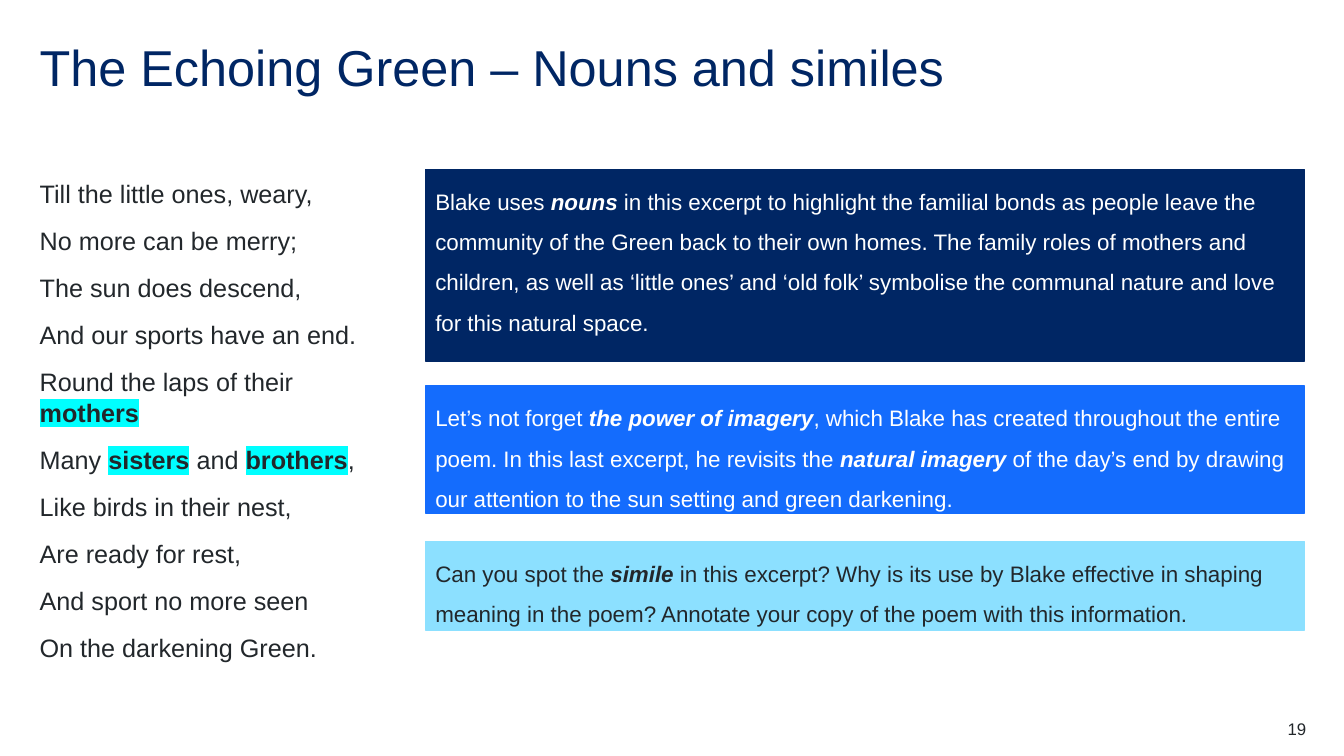
import pptx
import pptx.dml.color
import pptx.enum.shapes
import pptx.enum.text
import pptx.oxml
import pptx.oxml.ns
import pptx.util

Cm = pptx.util.Cm
Pt = pptx.util.Pt
PP_ALIGN = pptx.enum.text.PP_ALIGN
ANCHOR = pptx.enum.text.MSO_ANCHOR

NAVY, BLUE, SKY = "002664", "146CFD", "8CE0FF"
INK, WHITE, CYAN = "22272B", "FFFFFF", "00FFFF"
LEFT_MARGIN = 1
COMMENT_LEFT, COMMENT_WIDTH = 10.72, 22.15

POEM = [
    "Till the little ones, weary,",
    "No more can be merry;",
    "The sun does descend,",
    "And our sports have an end.",
    "Round the laps of their *mothers*",
    "Many *sisters* and *brothers*,",
    "Like birds in their nest,",
    "Are ready for rest,",
    "And sport no more seen",
    "On the darkening Green.",
]

COMMENTS = [
    (4.27, 4.83, NAVY, WHITE,
     "Blake uses *nouns* in this excerpt to highlight the familial bonds as people "
     "leave the community of the Green back to their own homes. The family roles of "
     "mothers and children, as well as ‘little ones’ and ‘old folk’ symbolise the "
     "communal nature and love for this natural space."),
    (9.73, 3.2, BLUE, WHITE,
     "Let’s not forget *the power of imagery*, which Blake has created throughout the "
     "entire poem. In this last excerpt, he revisits the *natural imagery *of the day’s "
     "end by drawing our attention to the sun setting and green darkening."),
    (13.64, 2.24, SKY, INK,
     "Can you spot the *simile* in this excerpt? Why is its use by Blake effective in "
     "shaping meaning in the poem? Annotate your copy of the poem with this information."),
]


def rgb(value):
    return pptx.dml.color.RGBColor.from_string(value)


def apply(target, values):
    for name, value in values.items():
        setattr(target, name, value)


def place(shape, left, top, width, height):
    apply(shape, {"left": Cm(left), "top": Cm(top),
                  "width": Cm(width), "height": Cm(height)})


def set_frame(frame, anchor, inset=True):
    apply(frame, {"word_wrap": True, "vertical_anchor": anchor,
                  "auto_size": pptx.enum.text.MSO_AUTO_SIZE.NONE})
    if not inset:
        apply(frame, {"margin_left": 0, "margin_top": 0,
                      "margin_right": 0, "margin_bottom": 0})


def highlight(run, color):
    mark = pptx.oxml.parse_xml(
        f'<a:highlight {pptx.oxml.ns.nsdecls("a")}><a:srgbClr val="{color}"/></a:highlight>')
    run.font.fill._xPr.find(pptx.oxml.ns.qn("a:solidFill")).addnext(mark)


def write(paragraph, marked_text, size, color, spacing, italic=False, marker=None):
    apply(paragraph, {"alignment": PP_ALIGN.LEFT, "space_before": Pt(0), **spacing})
    for index, words in enumerate(marked_text.split("*")):
        if not words:
            continue
        emphasised = index % 2 == 1
        run = paragraph.add_run()
        run.text = words
        apply(run.font, {"name": "Arial", "size": Pt(size), "bold": emphasised,
                         "italic": emphasised and italic})
        run.font.color.rgb = rgb(color)
        if emphasised and marker:
            highlight(run, marker)


def remove_bullet(paragraph):
    properties = paragraph._p.get_or_add_pPr()
    properties.set("marL", "0")
    properties.set("indent", "0")
    properties.append(pptx.oxml.parse_xml(f'<a:buNone {pptx.oxml.ns.nsdecls("a")}/>'))


def fill_title(title):
    place(title, LEFT_MARGIN, 1, 31.9, 1.52)
    set_frame(title.text_frame, ANCHOR.MIDDLE, inset=False)
    write(title.text_frame.paragraphs[0], "The Echoing Green – Nouns and similes",
          36, NAVY, {"line_spacing": 0.9})


def fill_poem(body):
    place(body, LEFT_MARGIN, 4.5, 9.07, 12.65)
    frame = body.text_frame
    set_frame(frame, ANCHOR.TOP, inset=False)
    for index, verse in enumerate(POEM):
        paragraph = frame.add_paragraph() if index else frame.paragraphs[0]
        write(paragraph, verse, 18, INK, {"space_after": Pt(12)}, marker=CYAN)
        remove_bullet(paragraph)


def add_comment(slide, top, height, background, ink, comment):
    panel = slide.shapes.add_shape(
        pptx.enum.shapes.MSO_SHAPE.RECTANGLE,
        Cm(COMMENT_LEFT), Cm(top), Cm(COMMENT_WIDTH), Cm(height))
    panel.shadow.inherit = False
    panel.fill.solid()
    panel.fill.fore_color.rgb = rgb(background)
    panel.line.color.rgb = rgb(background)
    panel.line.width = Pt(1)
    set_frame(panel.text_frame, ANCHOR.TOP)
    write(panel.text_frame.paragraphs[0], comment, 16, ink,
          {"line_spacing": 1.5, "space_after": Pt(6)}, italic=True)


def add_page_number(slide, number):
    page = slide.shapes.add_textbox(Cm(30.91), Cm(18.11), Cm(2.01), Cm(0.51))
    set_frame(page.text_frame, ANCHOR.TOP, inset=False)
    write(page.text_frame.paragraphs[0], number, 12, INK, {"alignment": PP_ALIGN.RIGHT})


def main():
    deck = pptx.Presentation()
    apply(deck, {"slide_width": Cm(33.87), "slide_height": Cm(19.05)})
    slide = deck.slides.add_slide(deck.slide_layouts[1])
    fill_title(slide.shapes.title)
    fill_poem(slide.placeholders[1])
    for comment in COMMENTS:
        add_comment(slide, *comment)
    add_page_number(slide, "19")
    deck.save("out.pptx")


if __name__ == "__main__":
    main()
